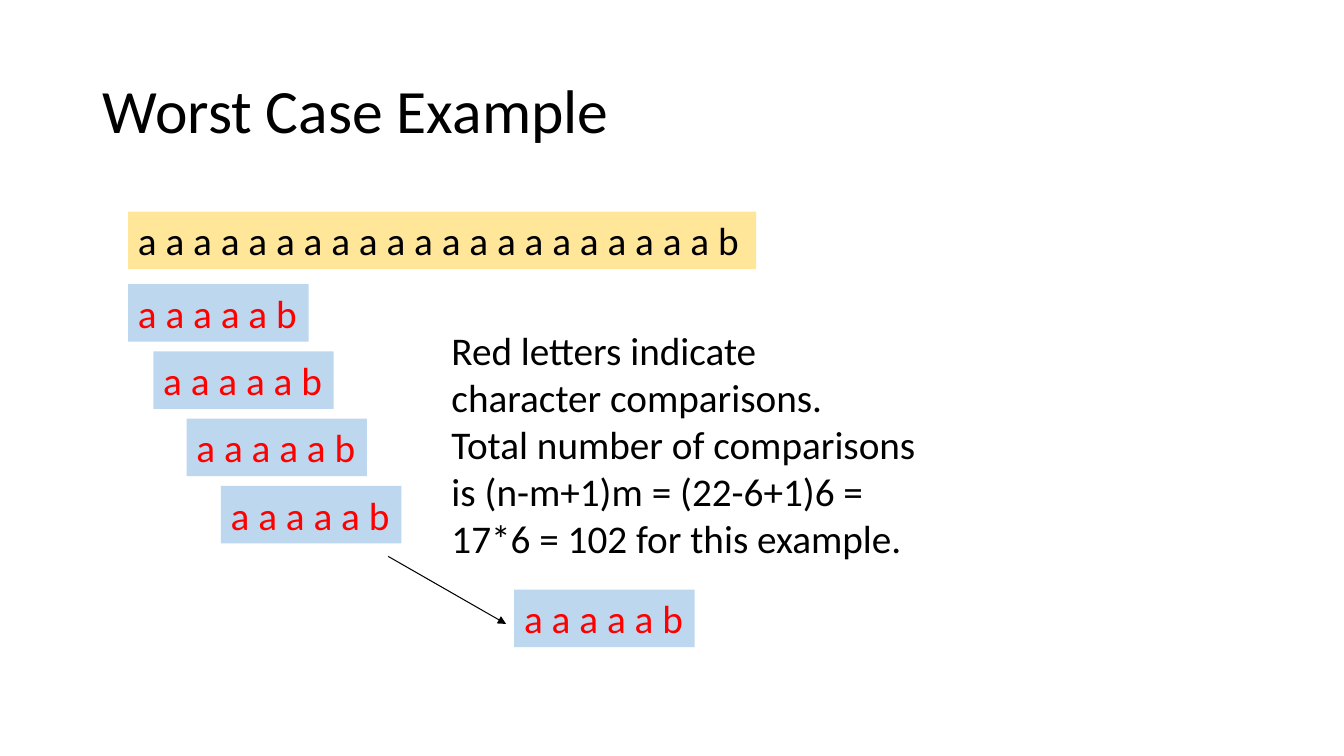
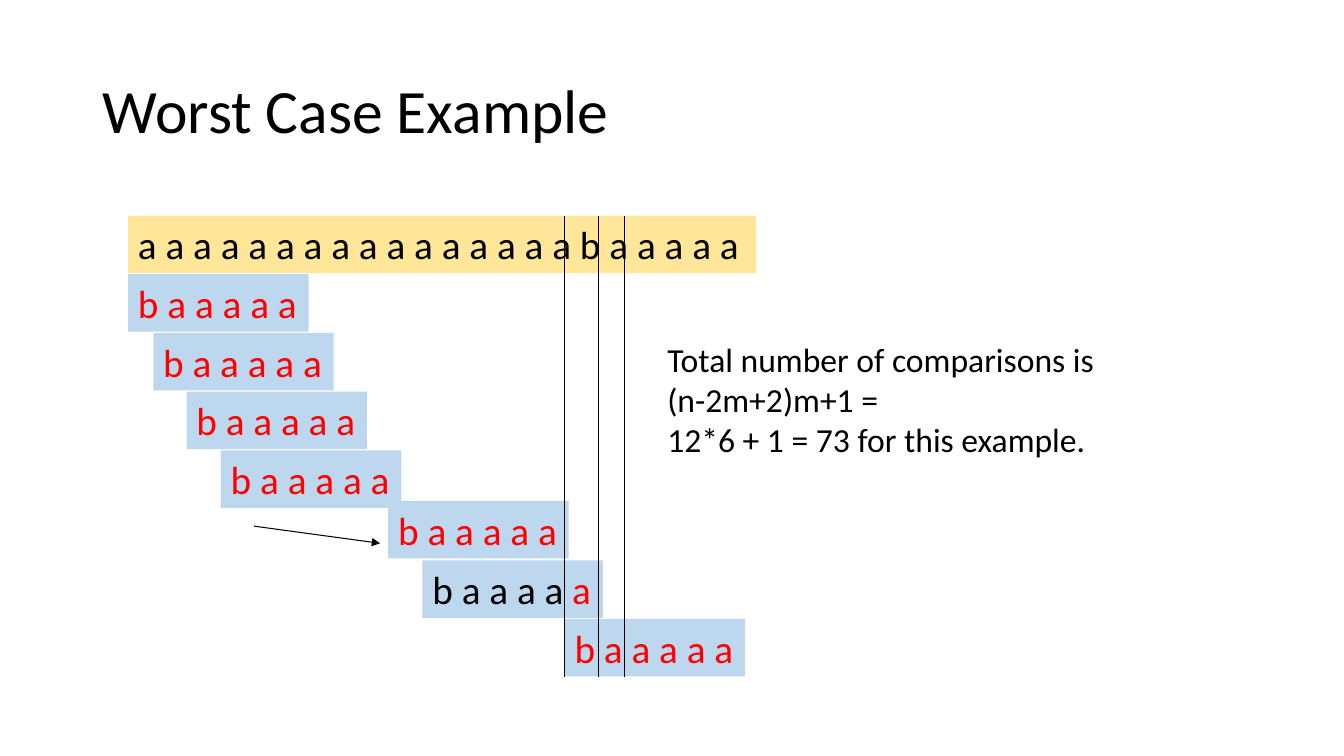
from lxml import etree
from pptx import Presentation
from pptx.dml.color import RGBColor
from pptx.enum import shapes, text
from pptx.oxml import ns
from pptx.util import Inches, Pt

BLACK = RGBColor(0x00, 0x00, 0x00)
RED = RGBColor(0xFF, 0x00, 0x00)
YELLOW = RGBColor(0xFF, 0xE6, 0x99)
BLUE = RGBColor(0xBD, 0xD7, 0xEE)

FONT = "Calibri"
TITLE = "Worst Case Example"
STRIP_HEIGHT = 0.57
TEXT_WIDTH, PATTERN_WIDTH = 6.23, 1.79
STRIP_LEFT = 1.27
STAIR_LEFTS = (STRIP_LEFT, 1.52, 1.85, 2.19)


def add_run(p, content, size, color=BLACK):
    r = p.add_run()
    r.text = content
    for name, value in {"name": FONT, "size": Pt(size)}.items():
        setattr(r.font, name, value)
    r.font.color.rgb = color


def add_titled_slide(prs):
    s = prs.slides.add_slide(prs.slide_layouts[5])
    title = s.shapes.title
    box = {"left": 0.92, "top": 0.4, "width": 11.5, "height": 1.45}
    for name, value in box.items():
        setattr(title, name, Inches(value))
    tf = title.text_frame
    tf.vertical_anchor = text.MSO_ANCHOR.MIDDLE
    p = tf.paragraphs[0]
    p.alignment = text.PP_ALIGN.LEFT
    p.line_spacing = 0.9
    add_run(p, TITLE, 44)
    return s


def add_strip(s, left, top, width, fill, *runs):
    """Add a filled strip of letters; each run is a (letters, colour) pair."""
    sp = s.shapes.add_shape(shapes.MSO_SHAPE.RECTANGLE, Inches(left), Inches(top),
                            Inches(width), Inches(STRIP_HEIGHT))
    sp.shadow.inherit = False
    sp.fill.solid()
    sp.fill.fore_color.rgb = fill
    sp.line.fill.background()
    tf = sp.text_frame
    frame = {"word_wrap": False, "auto_size": text.MSO_AUTO_SIZE.SHAPE_TO_FIT_TEXT,
             "vertical_anchor": text.MSO_ANCHOR.TOP}
    for name, value in frame.items():
        setattr(tf, name, value)
    p = tf.paragraphs[0]
    p.alignment = text.PP_ALIGN.LEFT
    for letters, color in runs:
        add_run(p, letters, 28, color)


def add_searched_text(s, top, letters):
    add_strip(s, STRIP_LEFT, top, TEXT_WIDTH, YELLOW, (letters, BLACK))


def add_pattern(s, left, top, *runs):
    add_strip(s, left, top, PATTERN_WIDTH, BLUE, *runs)


def add_stairs(s, top, step, letters):
    """Add the first shifts of the pattern, one below the other."""
    for i, left in enumerate(STAIR_LEFTS):
        add_pattern(s, left, top + i * step, (letters, RED))


def add_line(parent, x1, y1, x2, y2, arrow=False):
    line = parent.shapes.add_connector(shapes.MSO_CONNECTOR.STRAIGHT, Inches(x1),
                                       Inches(y1), Inches(x2), Inches(y2))
    line.line.color.rgb = BLACK
    line.line.width = Pt(0.75)
    if arrow:
        etree.SubElement(line.line._get_or_add_ln(), ns.qn("a:tailEnd"), type="triangle")
    etree.SubElement(line._element.spPr, ns.qn("a:effectLst"))


def add_note(s, left, top, width, height, size, lines):
    tf = s.shapes.add_textbox(Inches(left), Inches(top), Inches(width),
                              Inches(height)).text_frame
    tf.word_wrap = True
    tf.auto_size = text.MSO_AUTO_SIZE.SHAPE_TO_FIT_TEXT
    for i, content in enumerate(lines):
        p = tf.add_paragraph() if i else tf.paragraphs[0]
        add_run(p, content, size)


def build_brute_force(prs):
    s = add_titled_slide(prs)
    pattern = "a a a a a b"
    add_searched_text(s, 2.1, "a a a a a a a a a a a a a a a a a a a a a b")
    add_stairs(s, 2.82, 0.667, pattern)
    add_pattern(s, 5.1, 5.85, (pattern, RED))
    add_line(s, 3.85, 5.52, 5.02, 6.19, arrow=True)
    add_note(s, 4.38, 3.19, 6.4, 2.46, 28, [
        "Red letters indicate",
        "character comparisons.",
        "Total number of comparisons",
        "is (n-m+1)m = (22-6+1)6 =",
        "17*6 = 102 for this example.",
    ])


def build_late_mismatch(prs):
    s = add_titled_slide(prs)
    pattern = "b a a a a a"
    top = 2.14
    add_searched_text(s, top, "a a a a a a a a a a a a a a a a b a a a a a")
    add_stairs(s, 2.72, 0.583, pattern)
    add_pattern(s, 4.19, 5.56, ("b a a a a", BLACK), (" a", RED))
    add_line(s, 2.52, 5.22, 3.77, 5.39, arrow=True)
    add_note(s, 6.52, 3.31, 5.87, 1.31, 24, [
        "Total number of comparisons is",
        "(n-2m+2)m+1 =",
        "12*6 + 1 = 73 for this example.",
    ])
    for left, pattern_top in ((5.6, 6.14), (3.85, 4.97)):
        add_pattern(s, left, pattern_top, (pattern, RED))
    guides = s.shapes.add_group_shape()
    for x in (5.94, 6.19, 5.6):
        add_line(guides, x, top, x, 6.72)


def main():
    prs = Presentation()
    prs.slide_width, prs.slide_height = Inches(13.33), Inches(7.5)
    build_brute_force(prs)
    build_late_mismatch(prs)
    prs.save("out.pptx")


if __name__ == "__main__":
    main()
